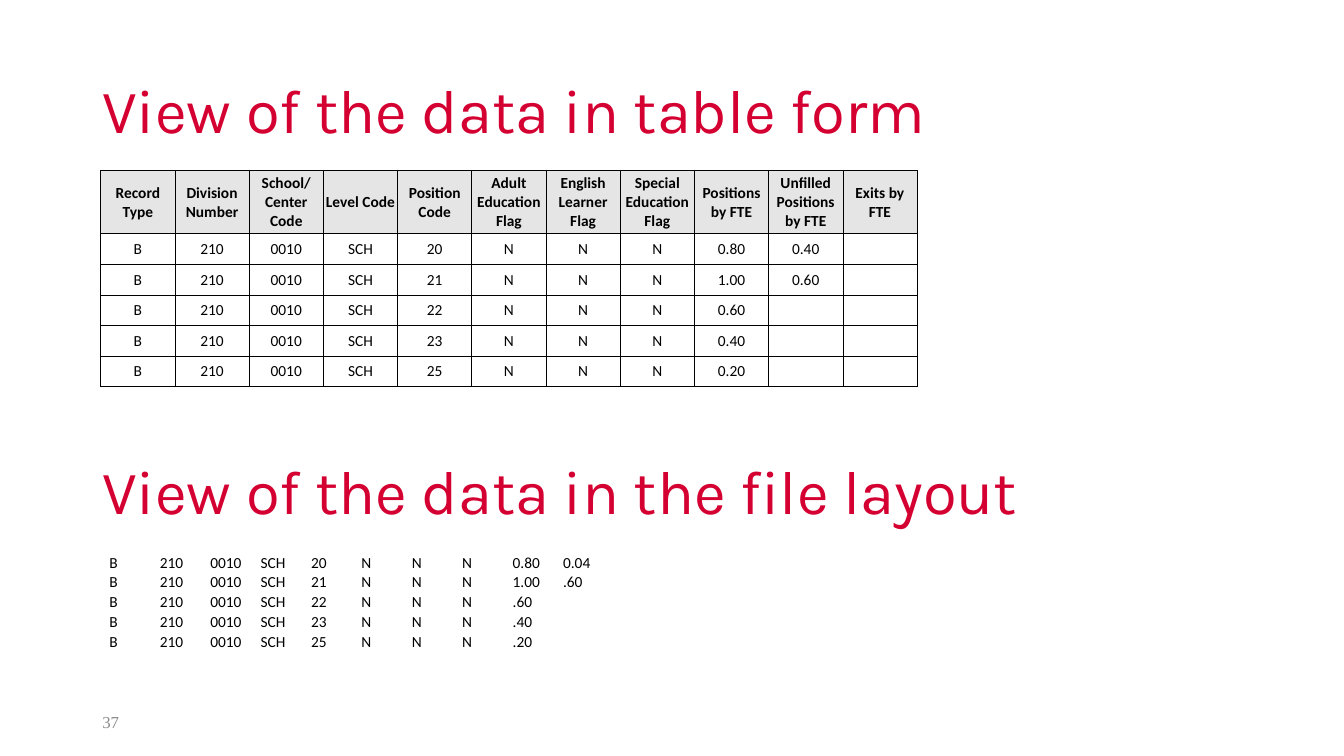
from lxml.etree import SubElement
from pptx import Presentation
from pptx.dml.color import RGBColor
from pptx.enum.text import MSO_ANCHOR as Anchor, PP_ALIGN as Align
from pptx.oxml.ns import qn
from pptx.util import Cm, Pt

CRIMSON = RGBColor(0xD5, 0x00, 0x32)
BLACK = RGBColor(0x00, 0x00, 0x00)
GRAY = RGBColor(0x8C, 0x8C, 0x8C)
HEADER_GRAY = RGBColor(0xE5, 0xE5, 0xE5)

LEFT = 2.33
HEADERS = [
    "Record Type", "Division Number", "School/\vCenter Code", "Level Code",
    "Position Code", "Adult Education Flag", "English Learner Flag",
    "Special Education Flag", "Positions by FTE", "Unfilled Positions by FTE",
    "Exits by FTE",
]
POSITIONS = [
    ("20", "0.80", "0.40"),
    ("21", "1.00", "0.60"),
    ("22", "0.60", ""),
    ("23", "0.40", ""),
    ("25", "0.20", ""),
]
FILE_VALUES = [("20", "0.80", "0.04"), ("21", "1.00", ".60"),
               ("22", ".60"), ("23", ".40"), ("25", ".20")]
TAB_STOPS = [2.06, 3.93, 5.8, 7.68, 9.55, 11.53, 13.4, 15.38, 17.26]


def record(code, *amounts):
    return ["B", "210", "0010", "SCH", code, "N", "N", "N", *amounts]


class SlideBuilder:
    title_font = "Karla"
    body_font = "Calibri"
    number_font = "Times New Roman"
    body_size = 11

    def __init__(self, slide):
        self.slide = slide

    def format_runs(self, paragraph, font, size, color, bold=False):
        for run in paragraph.runs:
            run.font.name = font
            run.font.size = Pt(size)
            run.font.bold = bold
            run.font.color.rgb = color

    def text_box(self, top, width, height, text, anchor=Anchor.MIDDLE):
        shape = self.slide.shapes.add_textbox(Cm(LEFT), Cm(top), Cm(width), Cm(height))
        text_frame = shape.text_frame
        text_frame.word_wrap = True
        text_frame.vertical_anchor = anchor
        text_frame.text = text
        return text_frame.paragraphs

    def title(self, top, text):
        paragraph = self.text_box(top, 29.21, 3.68, text)[0]
        paragraph.line_spacing = 0.9
        self.format_runs(paragraph, self.title_font, 44, CRIMSON)

    def slide_number(self, text):
        paragraph = self.text_box(17.68, 7.62, 1.01, text)[0]
        self.format_runs(paragraph, self.number_font, 12, GRAY)

    def tabbed_lines(self, top, records):
        text = "\n".join("\t".join(values) for values in records)
        for paragraph in self.text_box(top, 20.98, 2.77, text, Anchor.TOP):
            paragraph.line_spacing = 1.07
            properties = paragraph._p.get_or_add_pPr()
            properties.set("marL", str(Cm(0.18)))
            properties.set("indent", "0")
            tab_list = SubElement(properties, qn("a:tabLst"))
            for stop in TAB_STOPS:
                SubElement(tab_list, qn("a:tab"), pos=str(Cm(stop)), algn="l")
            self.format_runs(paragraph, self.body_font, self.body_size, BLACK)

    def cell_borders(self, cell):
        properties = cell._tc.get_or_add_tcPr()
        for position, side in enumerate(("lnL", "lnR", "lnT", "lnB")):
            line = SubElement(properties, qn(f"a:{side}"), w=str(Pt(0.5)))
            fill = SubElement(line, qn("a:solidFill"))
            SubElement(fill, qn("a:srgbClr"), val=str(BLACK))
            properties.insert(position, line)

    def table_cell(self, cell, text, is_header):
        cell.text = text
        cell.vertical_anchor = Anchor.MIDDLE
        cell.margin_left = cell.margin_right = cell.margin_top = Cm(0.02)
        cell.margin_bottom = 0
        if is_header:
            cell.fill.solid()
            cell.fill.fore_color.rgb = HEADER_GRAY
        else:
            cell.fill.background()
        self.cell_borders(cell)
        paragraph = cell.text_frame.paragraphs[0]
        paragraph.alignment = Align.CENTER
        self.format_runs(paragraph, self.body_font, self.body_size, BLACK, is_header)
        if not text:
            SubElement(paragraph._p, qn("a:endParaRPr"), sz=str(self.body_size * 100))

    def table(self, left, top, rows):
        column_width, header_height, row_height = 1.87, 1.59, 0.77
        column_count = len(rows[0])
        height = header_height + row_height * (len(rows) - 1)
        table = self.slide.shapes.add_table(
            len(rows), column_count, Cm(left), Cm(top),
            Cm(column_width * column_count), Cm(height)).table
        table.first_row = True
        table.horz_banding = False
        for column in table.columns:
            column.width = Cm(column_width)
        for row_index, values in enumerate(rows):
            is_header = row_index == 0
            table.rows[row_index].height = Cm(header_height if is_header else row_height)
            for column_index, text in enumerate(values):
                self.table_cell(table.cell(row_index, column_index), text, is_header)


def main():
    presentation = Presentation()
    presentation.slide_width = Cm(33.87)
    presentation.slide_height = Cm(19.05)
    builder = SlideBuilder(presentation.slides.add_slide(presentation.slide_layouts[6]))
    builder.title(1.01, "View of the data in table form")
    builder.slide_number("37")
    builder.table(2.54, 4.3, [HEADERS] + [record(*values, "") for values in POSITIONS])
    builder.tabbed_lines(13.77, [record(*values) for values in FILE_VALUES])
    builder.title(10.62, "View of the data in the file layout")
    presentation.save("out.pptx")


if __name__ == "__main__":
    main()
